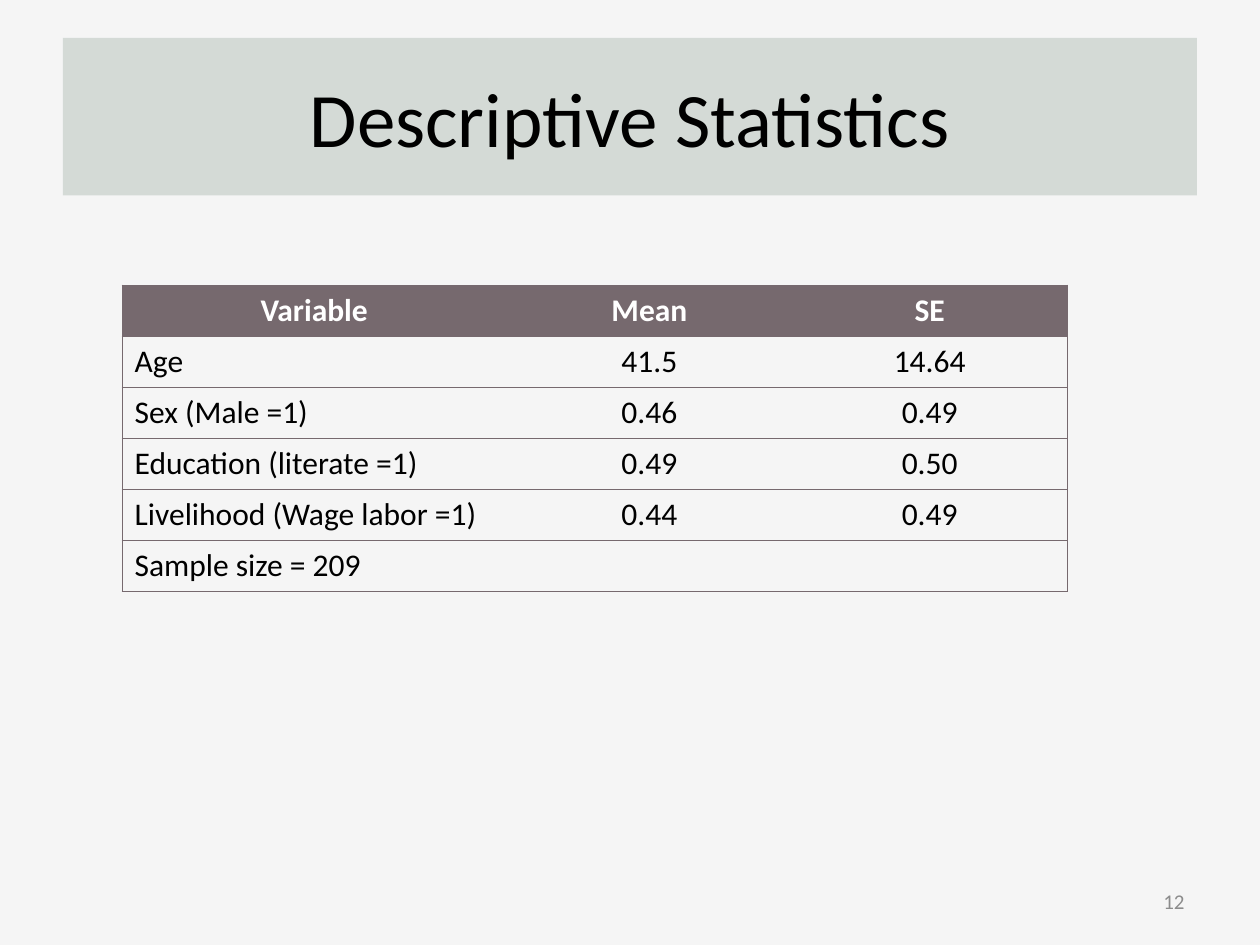
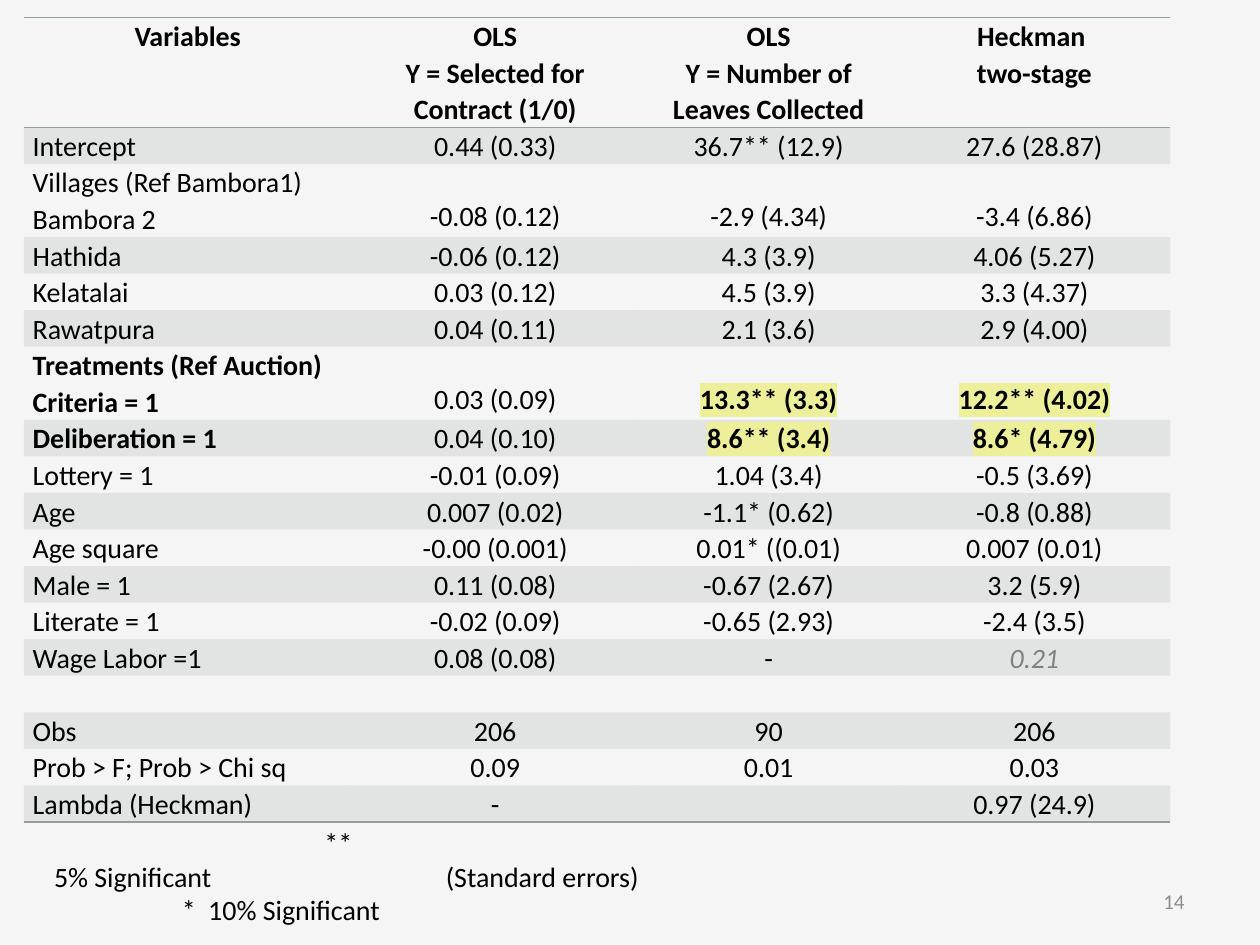
from lxml import etree
from pptx import Presentation
from pptx.dml.color import RGBColor
from pptx.enum.shapes import MSO_SHAPE
from pptx.enum.text import MSO_ANCHOR, PP_ALIGN
from pptx.oxml.ns import qn
from pptx.util import Pt

LEFT, CENTER, RIGHT = PP_ALIGN.LEFT, PP_ALIGN.CENTER, PP_ALIGN.RIGHT
MIDDLE, BOTTOM = MSO_ANCHOR.MIDDLE, MSO_ANCHOR.BOTTOM
RECTANGLE = MSO_SHAPE.RECTANGLE
FONT = "Calibri"
NO_STYLE = "{2D5ABB26-0587-4C30-8999-92F81FD0307C}"
COLORS = {
    "paper": "F5F5F5", "band": "D4DAD6", "ink": "000000", "white": "FFFFFF",
    "number": "8C8C8C", "mauve": "76696E", "sage": "93A299",
    "muted": "808080", "marker": "EDEF9B",
}


def write(para, text, size, color="ink", align=LEFT, bold=False):
    para.alignment = align
    span = para.add_run()
    span.text = text
    span.font.name = FONT
    span.font.size = Pt(size)
    span.font.bold = bold
    span.font.color.rgb = RGBColor.from_string(COLORS[color])
    return span


def draw_border(cell, sides, color, width):
    for side in sides:
        line = etree.SubElement(cell._tc.get_or_add_tcPr(), qn(f"a:ln{side}"), w=str(Pt(width)))
        fill = etree.SubElement(line, qn("a:solidFill"))
        etree.SubElement(fill, qn("a:srgbClr"), val=COLORS[color])


summary_rows = [
    ("Variable", "Mean", "SE"),
    ("Age", "41.5", "14.64"),
    ("Sex (Male =1)", "0.46", "0.49"),
    ("Education (literate =1)", "0.49", "0.50"),
    ("Livelihood (Wage labor =1)", "0.44", "0.49"),
    ("Sample size = 209", "", ""),
]
model_rows = [
    ("Variables", "OLS\nY = Selected for Contract (1/0)",
     "OLS\nY = Number of Leaves Collected", "Heckman \ntwo-stage"),
    ("Intercept", "0.44 (0.33)", "36.7** (12.9)", "27.6 (28.87)"),
    ("Villages (Ref Bambora1)\nBambora 2", "-0.08 (0.12)", "-2.9 (4.34)", "-3.4 (6.86)"),
    ("Hathida", "-0.06 (0.12)", "4.3 (3.9)", "4.06 (5.27)"),
    ("Kelatalai", "0.03 (0.12)", "4.5 (3.9)", "3.3 (4.37)"),
    ("Rawatpura", "0.04 (0.11)", "2.1 (3.6)", "2.9 (4.00)"),
    ("Treatments (Ref Auction)\nCriteria = 1", "0.03 (0.09)", "13.3** (3.3)", "12.2** (4.02)"),
    ("Deliberation = 1", "0.04 (0.10)", "8.6** (3.4)", "8.6* (4.79)"),
    ("Lottery = 1", "-0.01 (0.09)", "1.04 (3.4)", "-0.5 (3.69)"),
    ("Age", "0.007 (0.02)", "-1.1* (0.62)", "-0.8 (0.88)"),
    ("Age square", "-0.00 (0.001)", "0.01* ((0.01)", "0.007 (0.01)"),
    ("Male = 1", "0.11 (0.08)", "-0.67 (2.67)", "3.2 (5.9)"),
    ("Literate = 1", "-0.02 (0.09)", "-0.65 (2.93)", "-2.4 (3.5)"),
    ("Wage Labor =1", "0.08 (0.08)", "-", "0.21"),
    ("", "", "", ""),
    ("Obs", "206", "90", "206"),
    ("Prob > F; Prob > Chi sq", "0.09", "0.01", "0.03"),
    ("Lambda (Heckman)", "-", "", "0.97 (24.9)"),
]
KEY_ROWS = (6, 7)
MODEL_LINE = 20.9
summary_heights = [29.2] * len(summary_rows)
model_heights = [MODEL_LINE * (1 + row[0].count("\n")) for row in model_rows]
model_heights[0] = 3 * MODEL_LINE

deck = Presentation()
deck.slide_width, deck.slide_height = Pt(720), Pt(540)

tables = []
for number, rows, heights, widths, left, top in [
    ("12", summary_rows, summary_heights, (219.6, 163.4, 157), 69.8, 162.9),
    ("14", model_rows, model_heights, (187.2, 164.2, 148.3, 155.5), 13.7, 10.1),
]:
    page = deck.slides.add_slide(deck.slide_layouts[6])
    page.background.fill.solid()
    page.background.fill.fore_color.rgb = RGBColor.from_string(COLORS["paper"])

    frame = page.shapes.add_table(len(rows), len(widths), Pt(left), Pt(top),
                                  Pt(sum(widths)), Pt(sum(heights)))
    table = frame.table
    table.first_row = table.horz_banding = False
    table._tbl.tblPr.find(qn("a:tableStyleId")).text = NO_STYLE
    for column, width in zip(table.columns, widths):
        column.width = Pt(width)
    for row, height in zip(table.rows, heights):
        row.height = Pt(height)
    tables.append(table)

    box = page.shapes.add_textbox(Pt(516), Pt(500.5), Pt(168), Pt(28.8))
    box.text_frame.word_wrap = True
    box.text_frame.vertical_anchor = MIDDLE
    write(box.text_frame.paragraphs[0], number, 12, "number", RIGHT)

summary_page, model_page = deck.slides
summary_table, model_table = tables

title = summary_page.shapes.add_shape(RECTANGLE, Pt(36), Pt(21.6), Pt(648), Pt(90))
title.shadow.inherit = False
title.fill.solid()
title.fill.fore_color.rgb = RGBColor.from_string(COLORS["band"])
title.line.fill.background()
title.text_frame.word_wrap = True
title.text_frame.vertical_anchor = MIDDLE
write(title.text_frame.paragraphs[0], "Descriptive Statistics", 44, align=CENTER)

for r, values in enumerate(summary_rows):
    for c, value in enumerate(values):
        cell = summary_table.cell(r, c)
        sides = ["L"] * (c == 0) + ["R"] * (c == 2) + ["T", "B"]
        draw_border(cell, sides, "mauve", 0.75)
        heading = r == 0
        if heading:
            cell.fill.solid()
            cell.fill.fore_color.rgb = RGBColor.from_string(COLORS["mauve"])
        else:
            cell.fill.background()
        if value:
            write(cell.text_frame.paragraphs[0], value, 18, "white" if heading else "ink",
                  CENTER if heading or c else LEFT, heading)

last = len(model_rows) - 1
for r, values in enumerate(model_rows):
    for c, value in enumerate(values):
        cell = model_table.cell(r, c)
        cell.margin_left = cell.margin_right = Pt(5)
        cell.margin_top = cell.margin_bottom = 0
        draw_border(cell, {0: "TB", last: "B"}.get(r, ""), "sage", 1)
        if r % 2:
            cell.fill.solid()
            cell.fill.fore_color.rgb = RGBColor.from_string(COLORS["sage"])
            tint = cell._tc.tcPr.find(qn("a:solidFill"))[0]
            etree.SubElement(tint, qn("a:alpha"), val="20000")
        else:
            cell.fill.background()
        if c and "\n" in values[0]:
            cell.vertical_anchor = BOTTOM
            cell.margin_bottom = Pt(1.5)
        if not value:
            etree.SubElement(cell.text_frame.paragraphs[0]._p, qn("a:endParaRPr"), sz="1600")
            continue
        key = r in KEY_ROWS and c != 1
        for i, text in enumerate(value.split("\n")):
            para = cell.text_frame.add_paragraph() if i else cell.text_frame.paragraphs[0]
            para.line_spacing = 1.07
            muted = text == "0.21"
            span = write(para, text, 16, "muted" if muted else "ink",
                         CENTER if r == 0 or c else LEFT, r == 0 or key)
            span.font.italic = muted
            if key and c:
                marker = etree.Element(qn("a:highlight"))
                etree.SubElement(marker, qn("a:srgbClr"), val=COLORS["marker"])
                span._r.rPr.find(qn("a:solidFill")).addnext(marker)

legend = model_page.shapes.add_textbox(Pt(23.8), Pt(463.7), Pt(204.5), Pt(66.6)).text_frame
legend.word_wrap = True
legend.margin_top, legend.margin_bottom = Pt(8), 0
for i, (text, indent) in enumerate([("** 5% Significant", 154.5), ("*  10% Significant", 73)]):
    para = legend.add_paragraph() if i else legend.paragraphs[0]
    write(para, text, 16)
    para._p.get_or_add_pPr().set("indent", str(Pt(indent)))

errors = model_page.shapes.add_textbox(Pt(247.7), Pt(487.4), Pt(162.7), Pt(26.6)).text_frame
errors.word_wrap = True
write(errors.paragraphs[0], "(Standard errors)", 16)

deck.save("out.pptx")
